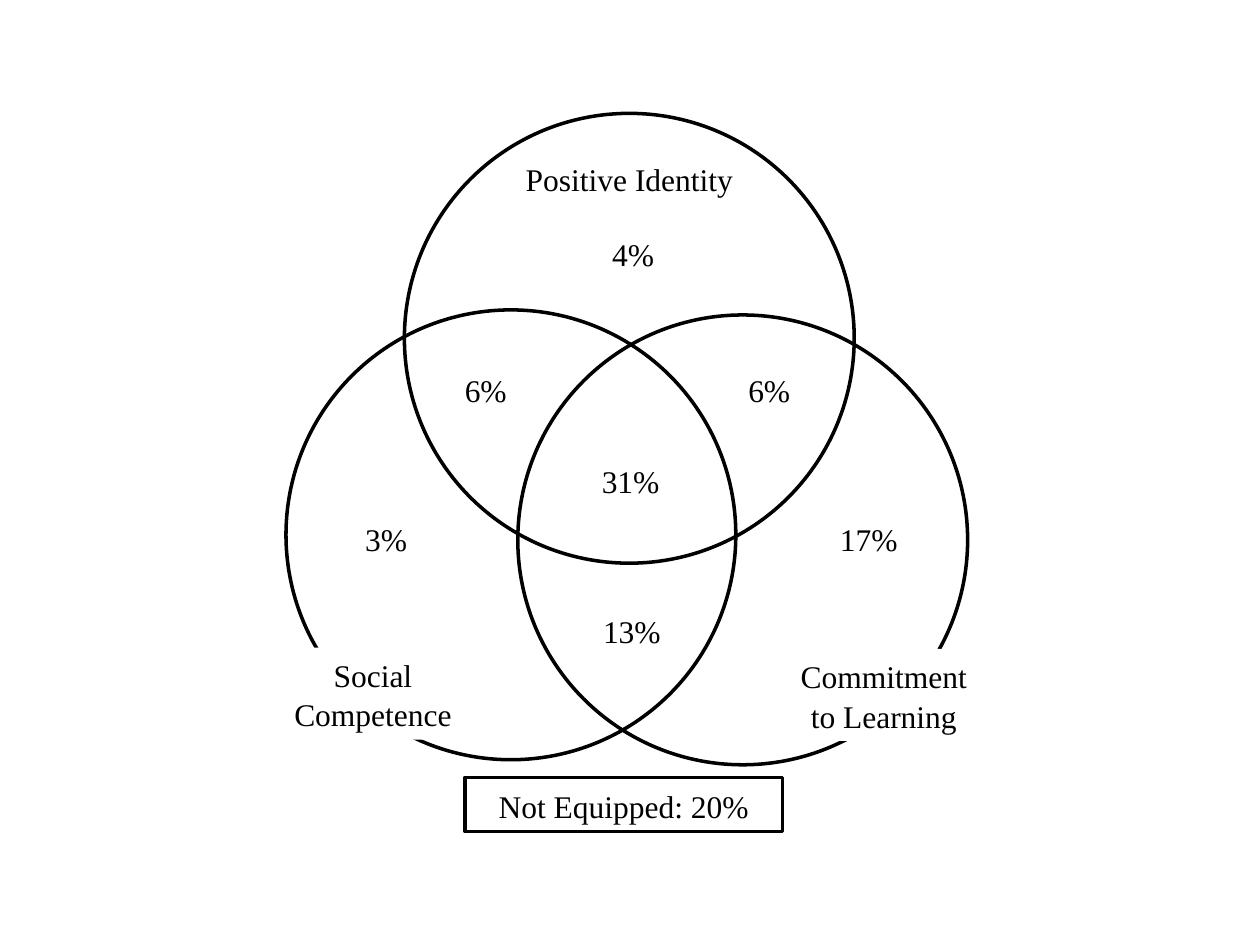
from dataclasses import dataclass
from pptx import Presentation
from pptx.dml.color import RGBColor
from pptx.enum.shapes import MSO_SHAPE
from pptx.enum.text import MSO_ANCHOR, MSO_AUTO_SIZE, PP_ALIGN
from pptx.shapes.autoshape import Shape
from pptx.shapes.group import GroupShape
from pptx.util import Inches, Pt

BLACK = "000000"
WHITE = "FFFFFF"
DIAMETER = 3.57
LINE_HEIGHT = 0.4
SHARE_WIDTH = 0.71


@dataclass(frozen=True)
class Circle:
    left: float
    top: float


@dataclass(frozen=True)
class Label:
    text: str
    left: float
    top: float
    width: float = SHARE_WIDTH
    height: float = LINE_HEIGHT
    outlined: bool = False


CIRCLES = [Circle(3.21, 0.9), Circle(2.27, 2.46), Circle(4.11, 2.5)]

LABELS = [
    Label("Positive Identity", 4.04, 1.21, width=1.91),
    Label("Social Competence", 2.22, 5.14, width=1.48, height=0.73),
    Label("Commitment to Learning", 6.25, 5.15, width=1.53, height=0.73),
    Label("4%", 4.67, 1.81),
    Label("3%", 2.71, 4.07),
    Label("17%", 6.54, 4.07),
    Label("6%", 3.5, 2.89),
    Label("6%", 5.75, 2.89),
    Label("31%", 4.65, 3.61),
    Label("13%", 4.66, 4.8),
    Label("Not Equipped: 20%", 3.69, 6.17, width=2.52, height=0.43, outlined=True),
]


def color(value: str) -> RGBColor:
    return RGBColor.from_string(value)


def outline(shape: Shape) -> None:
    shape.line.color.rgb = color(BLACK)
    shape.line.width = Pt(2)


def draw_circle(venn: GroupShape, circle: Circle) -> None:
    ring = venn.shapes.add_shape(
        MSO_SHAPE.OVAL, Inches(circle.left), Inches(circle.top),
        Inches(DIAMETER), Inches(DIAMETER))
    ring.shadow.inherit = False
    ring.fill.background()
    outline(ring)


def draw_label(venn: GroupShape, label: Label) -> None:
    box = venn.shapes.add_shape(
        MSO_SHAPE.RECTANGLE, Inches(label.left), Inches(label.top),
        Inches(label.width), Inches(label.height))
    box.shadow.inherit = False
    box.fill.solid()
    box.fill.fore_color.rgb = color(WHITE)
    if label.outlined:
        outline(box)
    else:
        box.line.fill.background()

    frame = box.text_frame
    frame.word_wrap = True
    frame.vertical_anchor = MSO_ANCHOR.MIDDLE
    if label.height == LINE_HEIGHT:
        frame.auto_size = MSO_AUTO_SIZE.SHAPE_TO_FIT_TEXT
    paragraph = frame.paragraphs[0]
    paragraph.alignment = PP_ALIGN.CENTER
    paragraph.line_spacing = 1.05
    run = paragraph.add_run()
    run.text = label.text
    run.font.name = "Times New Roman"
    run.font.size = Pt(18)
    run.font.color.rgb = color(BLACK)


def main() -> None:
    deck = Presentation()
    deck.slide_width = Inches(10)
    deck.slide_height = Inches(7.5)
    slide = deck.slides.add_slide(deck.slide_layouts[6])
    venn = slide.shapes.add_group_shape()
    for circle in CIRCLES:
        draw_circle(venn, circle)
    for label in LABELS:
        draw_label(venn, label)
    deck.save("out.pptx")


if __name__ == "__main__":
    main()
